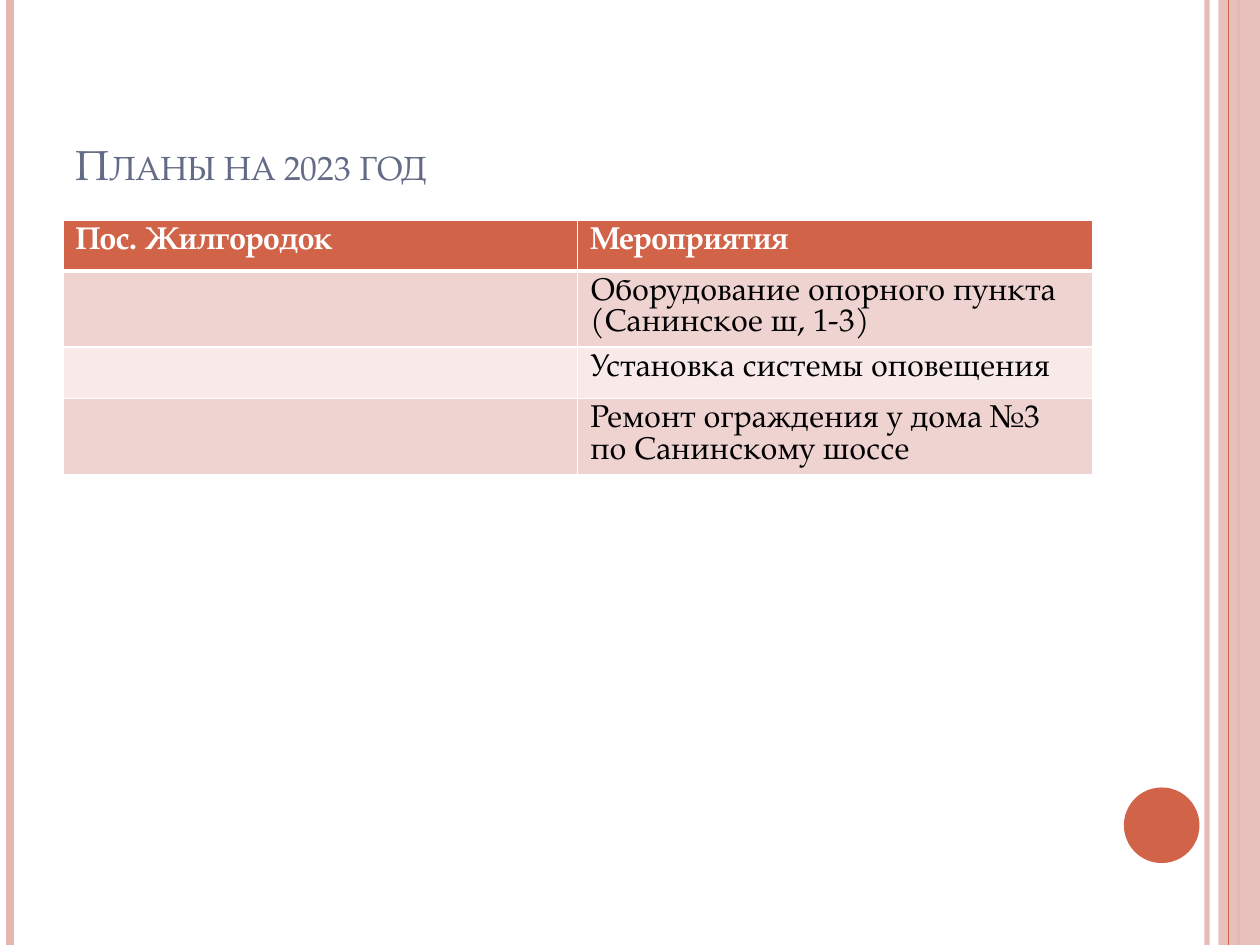
from pptx import Presentation
from pptx.dml.color import RGBColor
from pptx.enum.shapes import MSO_CONNECTOR, MSO_SHAPE
from pptx.enum.text import MSO_ANCHOR, PP_ALIGN
from pptx.oxml.ns import qn
from pptx.util import Inches, Pt
from lxml.etree import SubElement

FONT = "TeX Gyre Pagella"
RUST, ROSE, SLATE, WHITE, BLACK = "D16349", "E5B7B1", "646B86", "FFFFFF", "000000"
BANDS = ["EED3D0", "F7EAE9"]
PLANS = [
    "Оборудование опорного пункта (Санинское ш, 1-3)",
    "Установка системы оповещения",
    "Ремонт ограждения у дома №3 по Санинскому шоссе",
]
ROW_HEIGHTS = [0.4, 0.6, 0.41, 0.6]


def rgb(color):
    return RGBColor.from_string(color)


def set_alpha(fill_element, percent):
    color = fill_element.find(".//" + qn("a:srgbClr"))
    SubElement(color, qn("a:alpha"), val=str(percent * 1000))


def style_font(font, size, color, bold=False):
    font.name, font.size, font.bold = FONT, Pt(size), bold
    font.color.rgb = rgb(color)


def add_stripe(page, x, height, color, width, alpha=100):
    stripe = page.shapes.add_connector(
        MSO_CONNECTOR.STRAIGHT, Inches(x), 0, Inches(x), Inches(height))
    stripe.line.color.rgb = rgb(color)
    stripe.line.width = Pt(width)
    properties = stripe.line._get_or_add_ln().getparent()
    SubElement(properties, qn("a:effectLst"))
    if alpha < 100:
        set_alpha(properties, alpha)


def add_solid(page, kind, left, top, width, height, color, alpha=100):
    shape = page.shapes.add_shape(
        kind, Inches(left), Inches(top), Inches(width), Inches(height))
    shape.shadow.inherit = False
    shape.fill.solid()
    shape.fill.fore_color.rgb = rgb(color)
    shape.line.fill.background()
    if alpha < 100:
        set_alpha(shape._element.spPr, alpha)


def add_frame(page, width, height):
    # Stripes at both edges, the right band and the round badge
    add_stripe(page, width - 0.42, height, ROSE, 3, 93)
    add_stripe(page, 0.08, height, ROSE, 4.5)
    add_stripe(page, width - 0.17, height, ROSE, 1.5)
    add_solid(page, MSO_SHAPE.RECTANGLE, width - 0.33, 0, 0.33, height, ROSE, 87)
    add_stripe(page, width - 0.25, height, RUST, 0.75)
    add_solid(page, MSO_SHAPE.OVAL, width - 1.08, height - 1.25, 0.6, 0.6, RUST)


def add_title(page, left, top, width, height):
    title = page.shapes.title
    title.left, title.top = Inches(left), Inches(top)
    title.width, title.height = Inches(width), Inches(height)
    frame = title.text_frame
    frame.text = "Планы на 2023 год"
    frame.vertical_anchor = MSO_ANCHOR.BOTTOM
    para = frame.paragraphs[0]
    para.alignment = PP_ALIGN.LEFT
    style_font(para.font, 24, SLATE)
    para.runs[0].font._element.set("cap", "small")


def add_borders(cell, bottom_width):
    properties = cell._tc.get_or_add_tcPr()
    sides = [("a:lnL", 1), ("a:lnR", 1), ("a:lnT", 1), ("a:lnB", bottom_width)]
    for position, (tag, width) in enumerate(sides):
        border = properties.makeelement(qn(tag), {"w": str(Pt(width))})
        properties.insert(position, border)
        fill = SubElement(border, qn("a:solidFill"))
        SubElement(fill, qn("a:srgbClr"), val=WHITE)


def add_plan_table(page, left, top, width):
    rows = [("Пос. Жилгородок", "Мероприятия")] + [("", plan) for plan in PLANS]
    table = page.shapes.add_table(
        len(rows), 2, Inches(left), Inches(top), Inches(width),
        Inches(sum(ROW_HEIGHTS))).table
    for r, texts in enumerate(rows):
        table.rows[r].height = Inches(ROW_HEIGHTS[r])
        header = r == 0
        for c, text in enumerate(texts):
            cell = table.cell(r, c)
            cell.text = text
            cell.fill.solid()
            cell.fill.fore_color.rgb = rgb(RUST if header else BANDS[(r - 1) % 2])
            style_font(cell.text_frame.paragraphs[0].font, 18,
                       WHITE if header else BLACK, header)
            add_borders(cell, 3 if header else 1)


def main():
    deck = Presentation()
    deck.slide_width, deck.slide_height = Inches(10), Inches(7.5)
    page = deck.slides.add_slide(deck.slide_layouts[5])  # title only
    add_frame(page, 10, 7.5)
    add_title(page, 0.5, 0.3, 8.17, 1.25)
    add_plan_table(page, 0.5, 1.75, 8.17)
    deck.save("out.pptx")


if __name__ == "__main__":
    main()
